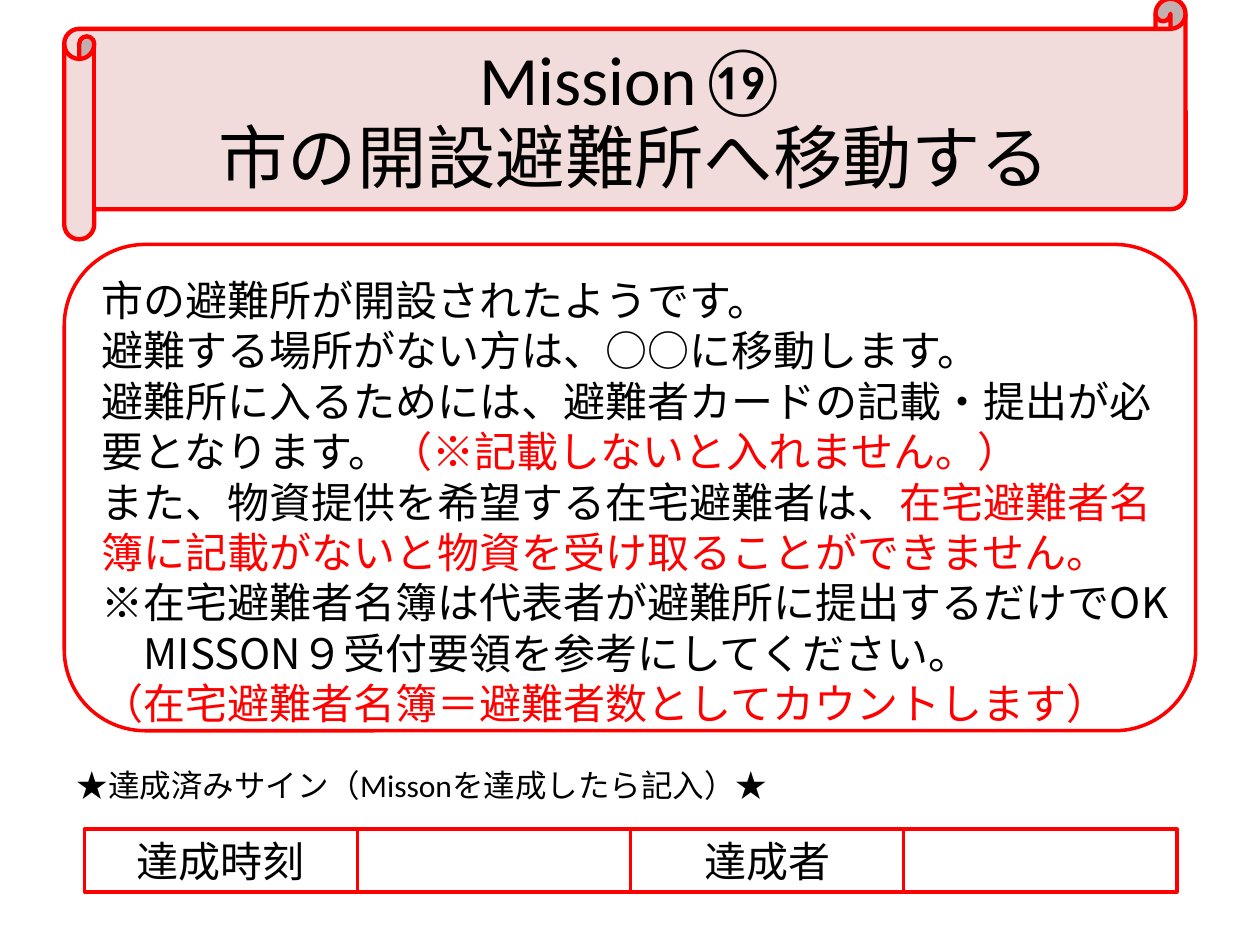
from pptx import Presentation
from pptx.dml.color import RGBColor
from pptx.enum.shapes import MSO_SHAPE as Shape
from pptx.enum.text import MSO_ANCHOR as Anchor, PP_ALIGN as Align
from pptx.util import Inches, Pt
from lxml.etree import SubElement
from pptx.oxml.ns import qn

COLORS = {"red": "FF0000", "pink": "F2DCDB", "black": "000000"}
LATIN, JAPANESE = "Calibri", "Noto Sans CJK JP"

BODY = [
    [("市の避難所が開設されたようです。", "black")],
    [("避難する場所がない方は、○○に移動します。", "black")],
    [("避難所に入るためには、避難者カードの記載・提出が必要となります。", "black"),
     ("（※記載しないと入れません。）", "red")],
    [("また、物資提供を希望する在宅避難者は、", "black"),
     ("在宅避難者名簿に記載がないと物資を受け取ることができません。", "red")],
    [("※在宅避難者名簿は代表者が避難所に提出するだけでOK", "black")],
    [("　MISSON９受付要領を参考にしてください。", "black")],
    [("（在宅避難者名簿＝避難者数としてカウントします）", "red")],
]


def color(name):
    return RGBColor.from_string(COLORS[name])


def write(shape, paragraphs, size, font=LATIN, align=Align.LEFT,
          anchor=Anchor.TOP, spacing=None):
    """Fill a shape with paragraphs, each a list of (text, colour) runs."""
    frame = shape.text_frame
    frame.word_wrap = True
    frame.vertical_anchor = anchor
    for index, runs in enumerate(paragraphs):
        paragraph = frame.add_paragraph() if index else frame.paragraphs[0]
        paragraph.alignment = align
        if spacing:
            paragraph.line_spacing = spacing
        for text, name in runs:
            for number, line in enumerate(text.split("\n")):
                if number:
                    paragraph.add_line_break()
                run = paragraph.add_run()
                run.text = line
                run.font.size = Pt(size)
                run.font.name = font
                run.font.color.rgb = color(name)
                east_asian = SubElement(run.font._element, qn("a:ea"))
                east_asian.set("typeface", JAPANESE)


def add_outline(shapes, kind, box, width, fill=None):
    shape = shapes.add_shape(kind, *map(Inches, box))
    shape.shadow.inherit = False
    if fill:
        shape.fill.solid()
        shape.fill.fore_color.rgb = color(fill)
    else:
        shape.fill.background()
    shape.line.color.rgb = color("red")
    shape.line.width = Pt(width)
    return shape


def add_text(slide, box, paragraphs, **text_format):
    write(slide.shapes.add_textbox(*map(Inches, box)), paragraphs, **text_format)


def add_banner(slide, left, top, width, height):
    add_outline(slide.shapes, Shape.HORIZONTAL_SCROLL,
                (left, top, width, height), 2.5, "pink")
    add_text(slide, (left + 0.47, top + 0.33, 8.11, 1.25),
             [[("Mission⑲\n市の開設避難所へ移動する", "black")]], size=39.6,
             align=Align.CENTER, anchor=Anchor.MIDDLE, spacing=Pt(44.6))


def add_instructions(slide, left, top, width, height):
    add_text(slide, (left + 0.2, top + 0.19, width - 0.2, height - 0.3),
             BODY, size=24, font=JAPANESE, spacing=Pt(28.8))
    add_outline(slide.shapes, Shape.ROUNDED_RECTANGLE,
                (left, top, width, height), 2)


def add_sign_off(slide, left, top, width, height):
    add_text(slide, (left, top, 6.69, 0.4),
             [[("★達成済みサイン（Missonを達成したら記入）★", "black")]], size=18)
    # Row of equal cells: label, blank, label, blank
    labels = ["達成時刻", "", "達成者", ""]
    cell_width, cell_height = (width - 0.16) / len(labels), 0.5
    group = slide.shapes.add_group_shape()
    for index, label in enumerate(labels):
        cell = add_outline(group.shapes, Shape.RECTANGLE,
                           (left + 0.16 + index * cell_width,
                            top + height - cell_height, cell_width, cell_height), 2)
        if label:
            write(cell, [[(label, "black")]], 24, align=Align.CENTER)


def main():
    presentation = Presentation()
    presentation.slide_width, presentation.slide_height = Inches(10), Inches(7.5)
    slide = presentation.slides.add_slide(presentation.slide_layouts[6])
    add_banner(slide, 0.51, -0.01, 8.9, 1.91)
    add_instructions(slide, 0.51, 1.94, 8.98, 3.86)
    add_sign_off(slide, 0.51, 6.03, 8.83, 1.05)
    presentation.save("out.pptx")


if __name__ == "__main__":
    main()
